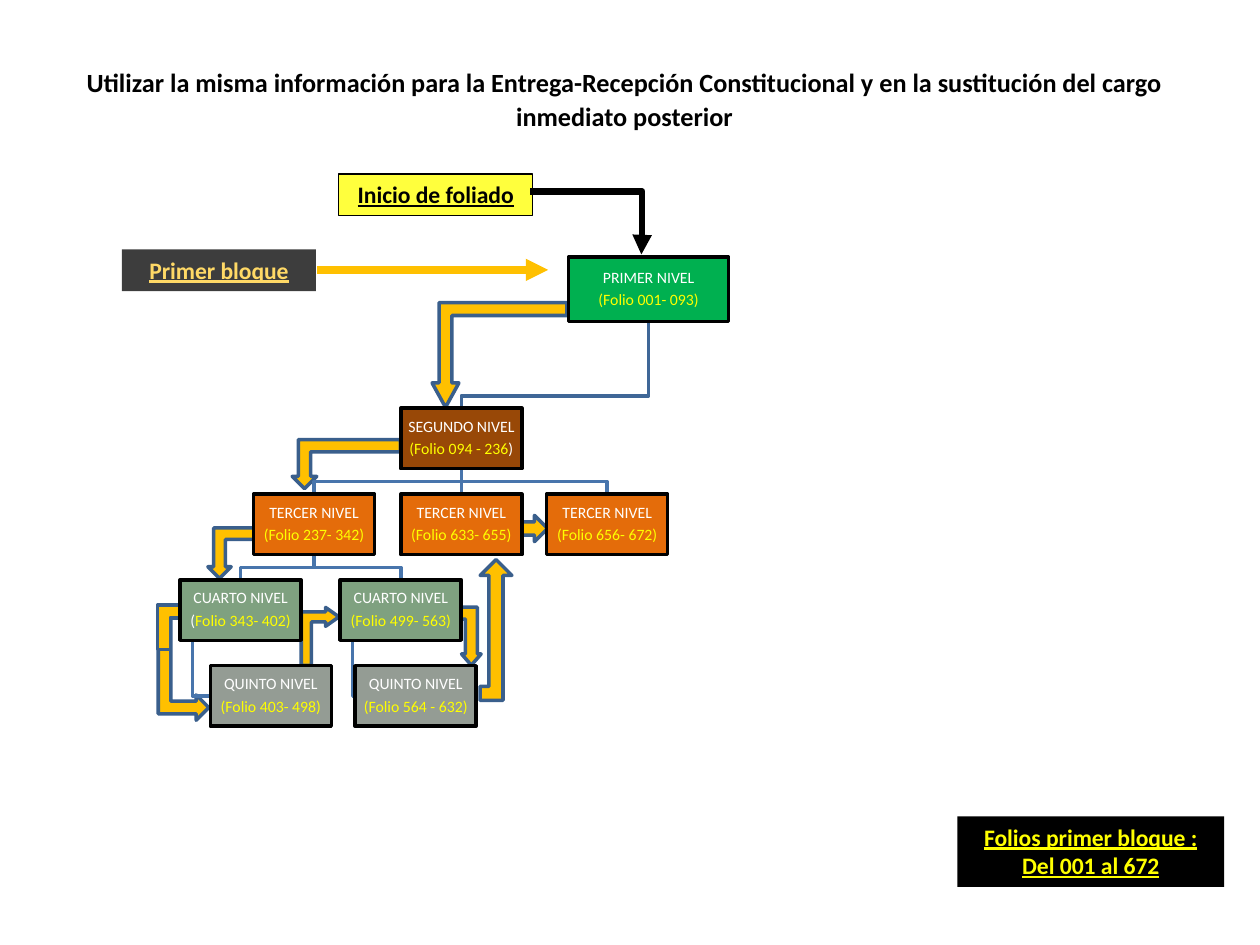
from lxml import etree
from pptx import Presentation
from pptx import util as u
from pptx.dml import color
from pptx.enum import shapes, text
from pptx.oxml import ns

FONT = "Calibri"
WHITE, BLACK, YELLOW, GOLD = "FFFFFF", "000000", "FFFF00", "FFC000"
NODE_SIZE = (2.44, 1.22)
LINK_BLUE = "4875AC"
BUS_GAP = 0.25

LEVELS = {
    1: ("PRIMER NIVEL", "00B050"),
    2: ("SEGUNDO NIVEL", "984807"),
    3: ("TERCER NIVEL", "E46C0A"),
    4: ("CUARTO NIVEL", "7FA180"),
    5: ("QUINTO NIVEL", "949C94"),
}


def level_top(level):
    return 5.18 if level == 1 else 8.23 + 1.73 * (level - 2)


# name: level, left edge, folio runs
NODES = {
    "first": (1, 11.46, [("(Folio 001- 093)", YELLOW)]),
    "second": (2, 8.08, [("(Folio 094 - 236", YELLOW), (")", WHITE)]),
    "third_left": (3, 5.11, [("(Folio 237- 342)", YELLOW)]),
    "third_middle": (3, 8.08, [("(Folio 633- 655)", YELLOW)]),
    "third_right": (3, 11.02, [("(Folio 656- 672)", YELLOW)]),
    "fourth_left": (4, 3.63, [("(", WHITE), ("Folio 343- 402)", YELLOW)]),
    "fourth_right": (4, 6.86, [("(Folio 499- 563)", YELLOW)]),
    "fifth_left": (5, 4.24, [("(Folio 403- 498)", YELLOW)]),
    "fifth_right": (5, 7.16, [("(Folio 564 - 632)", YELLOW)]),
}
DROP_LINKS = [
    ("second", "third_right"), ("second", "third_middle"),
    ("second", "third_left"), ("third_left", "fourth_right"),
    ("third_left", "fourth_left"), ("first", "second"),
]
SIDE_LINKS = [("fourth_right", "fifth_right"), ("fourth_left", "fifth_left")]

# left, top, width, height, rotation, flipped, adjustments
BENT_ARROWS = [
    (8.79, 12.24, 0.91, 1.17, 180, True, (0.263, 0.217, 0.25)),
    (8.71, 6.1, 2.72, 2.11, 180, False, (0.123, 0.128, 0.233)),
    (4.19, 10.64, 0.94, 1.02, 180, False, ()),
    (5.89, 8.86, 2.18, 0.99, 180, False, ()),
    (5.87, 12.45, 1.17, 0.76, 90, True, (0.268, 0.25, 0.354)),
    (9.68, 11.28, 0.64, 2.84, 0, False, (0.443, 0.5, 0.5)),
    (2.57, 12.88, 2.26, 1.02, 90, False, ()),
    (3.18, 12.07, 1.02, 1.02, 90, True, (0.25, 0.25, 0)),
]


def rgb(value):
    return color.RGBColor.from_string(value)


def cm(*values):
    return [u.Cm(value) for value in values]


def style(shape, fill, line=None, width=2):
    shape.shadow.inherit = False
    if fill:
        shape.fill.solid()
        shape.fill.fore_color.rgb = rgb(fill)
    else:
        shape.fill.background()
    if line:
        shape.line.color.rgb = rgb(line)
        shape.line.width = u.Pt(width)


def add_run(paragraph, words, size, hue, bold=False, underline=False):
    run = paragraph.add_run()
    run.text = words
    run.font.name, run.font.size = FONT, u.Pt(size)
    run.font.bold, run.font.underline = bold, underline
    run.font.color.rgb = rgb(hue)


def fill_paragraphs(frame, lines, size, spacing=1, after=0, **emphasis):
    """Write centred lines, each a list of (words, colour) runs."""
    frame.word_wrap = True
    for index, runs in enumerate(lines):
        paragraph = frame.add_paragraph() if index else frame.paragraphs[0]
        paragraph.alignment = text.PP_ALIGN.CENTER
        paragraph.line_spacing = spacing
        paragraph.space_after = u.Pt(after)
        for words, hue in runs:
            add_run(paragraph, words, size, hue, **emphasis)


def set_title(slide, words):
    title = slide.shapes.title
    title.left, title.top, title.width, title.height = cm(1.07, 1.17, 23.04, 1.63)
    frame = title.text_frame
    frame.auto_size = text.MSO_AUTO_SIZE.NONE
    frame.vertical_anchor = text.MSO_ANCHOR.TOP
    fill_paragraphs(frame, [[(words, BLACK)]], 15, 1.07, 6, bold=True)


def add_label(slide, box, lines, fill, hue, opacity=100, line=None):
    label = slide.shapes.add_textbox(*cm(*box))
    label.fill.solid()
    label.fill.fore_color.rgb = rgb(fill)
    if opacity < 100:
        fill_color = label.element.spPr.find(".//" + ns.qn("a:srgbClr"))
        alpha = etree.SubElement(fill_color, ns.qn("a:alpha"))
        alpha.set("val", str(opacity * 1000))
    if line:
        label.line.color.rgb = rgb(line)
        label.line.width = u.Pt(0.75)
    fill_paragraphs(label.text_frame, [[(words, hue)] for words in lines], 13.5,
                    bold=True, underline=True)


def add_block_arrow(slide, kind, box, rotation=0, flipped=False, adjustments=()):
    arrow = slide.shapes.add_shape(kind, *cm(*box))
    style(arrow, GOLD, "3A5F8C")
    arrow.rotation = rotation
    if flipped:
        arrow.element.spPr.find(ns.qn("a:xfrm")).set("flipH", "1")
    for index, value in enumerate(adjustments):
        arrow.adjustments[index] = value


def add_line(slide, kind, ends, hue, width, head=False, bend=None):
    line = slide.shapes.add_connector(kind, *cm(*ends))
    line.line.color.rgb = rgb(hue)
    line.line.width = u.Pt(width)
    properties = line.element.spPr
    if head:
        tail = etree.SubElement(properties.find(ns.qn("a:ln")), ns.qn("a:tailEnd"))
        tail.set("type", "triangle")
    if bend:
        guides = properties.find(ns.qn("a:prstGeom")).find(ns.qn("a:avLst"))
        guide = etree.SubElement(guides, ns.qn("a:gd"))
        guide.set("name", "adj1")
        guide.set("fmla", f"val {bend}")
    etree.SubElement(properties, ns.qn("a:effectLst"))


def node_box(name):
    level, left, _ = NODES[name]
    width, height = (3.23, 1.3) if level == 1 else NODE_SIZE
    return left, level_top(level), width, height


def add_path(slide, points, hue):
    start, *others = [cm(*point) for point in points]
    builder = slide.shapes.build_freeform(*start)
    builder.add_line_segments(others, close=False)
    style(builder.convert_to_shape(), None, hue)


def add_drop_link(slide, parent, child):
    """Join the bottom centre of the parent to the top centre of the child."""
    left, top, width, height = node_box(parent)
    child_left, child_top, child_width, _ = node_box(child)
    start, end = left + width / 2, child_left + child_width / 2
    if start == end:
        add_line(slide, shapes.MSO_CONNECTOR.STRAIGHT,
                 (start, top + height, end, child_top), LINK_BLUE, 2)
        return
    bus = child_top - BUS_GAP
    hue = "3F6797" if parent == "first" else LINK_BLUE
    add_path(slide, [(start, top + height), (start, bus), (end, bus), (end, child_top)], hue)


def add_side_link(slide, parent, child):
    """Join the lower left of the parent to the left side of the child."""
    left, top, _, height = node_box(parent)
    child_left, child_top, _, child_height = node_box(child)
    spine, middle = left + BUS_GAP, child_top + child_height / 2
    add_path(slide, [(spine, top + height), (spine, middle), (child_left, middle)], LINK_BLUE)


def add_node(slide, name):
    level, _, folio = NODES[name]
    heading, fill = LEVELS[level]
    node = slide.shapes.add_shape(shapes.MSO_SHAPE.RECTANGLE, *cm(*node_box(name)))
    style(node, fill, BLACK)
    frame = node.text_frame
    frame.margin_left = frame.margin_right = frame.margin_top = frame.margin_bottom = u.Cm(0.02)
    frame.vertical_anchor = text.MSO_ANCHOR.MIDDLE
    fill_paragraphs(frame, [[(heading, WHITE)], folio], 9, 0.9, 3.15)


def main():
    presentation = Presentation()
    presentation.slide_width, presentation.slide_height = cm(25.4, 19.05)
    slide = presentation.slides.add_slide(presentation.slide_layouts[5])
    set_title(slide, "Utilizar la misma información para la Entrega-Recepción "
                     "Constitucional y en la sustitución del cargo inmediato posterior")
    for *box, rotation, flipped, adjustments in BENT_ARROWS:
        add_block_arrow(slide, shapes.MSO_SHAPE.BENT_UP_ARROW, box, rotation, flipped, adjustments)
    add_block_arrow(slide, shapes.MSO_SHAPE.RIGHT_ARROW, (10.46, 10.39, 0.58, 0.53))
    add_label(slide, (2.46, 5.03, 3.91, 0.84), ["Primer bloque"], BLACK, "FFD966", 76)
    add_label(slide, (19.3, 16.46, 5.38, 1.42),
              ["Folios primer bloque :", "Del 001 al 672"], BLACK, YELLOW)
    add_label(slide, (6.83, 3.51, 3.91, 0.84), ["Inicio de foliado"], YELLOW, BLACK, 76, BLACK)
    add_line(slide, shapes.MSO_CONNECTOR.STRAIGHT, (6.4, 5.44, 11.05, 5.44), GOLD, 4.25, True)
    add_line(slide, shapes.MSO_CONNECTOR.ELBOW, (10.69, 3.86, 12.93, 5.13), BLACK, 3.75, True, 100700)
    for link in DROP_LINKS:
        add_drop_link(slide, *link)
    for link in SIDE_LINKS:
        add_side_link(slide, *link)
    for name in NODES:
        add_node(slide, name)
    presentation.save("out.pptx")


if __name__ == "__main__":
    main()
